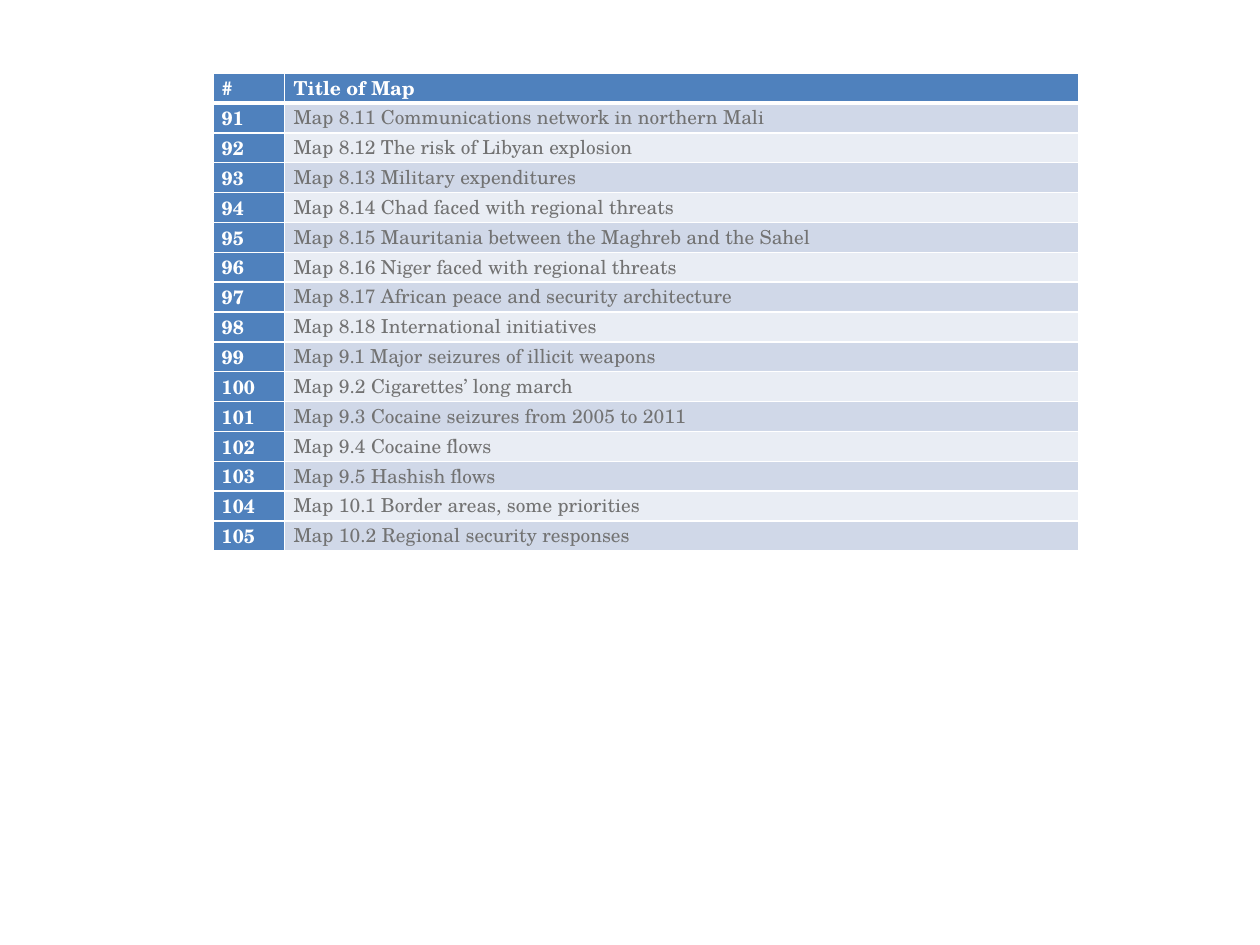
from lxml import etree
from pptx import Presentation
from pptx.dml.color import RGBColor
from pptx.enum.text import PP_ALIGN
from pptx.oxml.ns import qn
from pptx.util import Inches, Pt

WHITE = RGBColor(0xFF, 0xFF, 0xFF)
BLUE = RGBColor(0x4F, 0x81, 0xBD)
BAND_DARK = RGBColor(0xD0, 0xD8, 0xE8)
BAND_LIGHT = RGBColor(0xE9, 0xED, 0xF4)
GREY = RGBColor(0x72, 0x72, 0x72)
FONT = "TeX Gyre Schola"
FIRST_NUMBER = 91

TITLES = [
    "Map 8.11 Communications network in northern Mali",
    "Map 8.12 The risk of Libyan explosion",
    "Map 8.13 Military expenditures",
    "Map 8.14 Chad faced with regional threats",
    "Map 8.15 Mauritania between the Maghreb and the Sahel",
    "Map 8.16 Niger faced with regional threats",
    "Map 8.17 African peace and security architecture",
    "Map 8.18 International initiatives",
    "Map 9.1 Major seizures of illicit weapons",
    "Map 9.2 Cigarettes’ long march",
    "Map 9.3 Cocaine seizures from 2005 to 2011",
    "Map 9.4 Cocaine flows",
    "Map 9.5 Hashish flows",
    "Map 10.1 Border areas, some priorities",
    "Map 10.2 Regional security responses",
]


def add_border(cell, side, width):
    tcPr = cell._tc.get_or_add_tcPr()
    ln = etree.SubElement(tcPr, qn("a:" + side), w=str(Pt(width)))
    fill = etree.SubElement(ln, qn("a:solidFill"))
    etree.SubElement(fill, qn("a:srgbClr"), val=str(WHITE))


prs = Presentation()
prs.slide_width, prs.slide_height = Inches(10), Inches(7.5)
s = prs.slides.add_slide(prs.slide_layouts[6])

# Map list: header row, then numbered titles
rows = [("#", "Title of Map")]
rows += [(str(n), title) for n, title in enumerate(TITLES, FIRST_NUMBER)]
table = s.shapes.add_table(len(rows), 2, Inches(1.69), Inches(0.58),
                           Inches(6.87), Inches(3.78)).table
table.columns[0].width = Inches(0.57)
table.columns[1].width = Inches(6.3)

for i, row in enumerate(rows):
    for j, text in enumerate(row):
        cell = table.cell(i, j)
        is_heading = i == 0 or j == 0
        cell.margin_left = cell.margin_right = Inches(0.07)
        cell.margin_top = cell.margin_bottom = 0

        # Borders, heavier under the header, then the banded fill
        add_border(cell, "lnL", 1)
        add_border(cell, "lnR", 1)
        add_border(cell, "lnT", 3 if i == 1 else 1)
        add_border(cell, "lnB", 3 if i == 0 else 1)
        cell.fill.solid()
        band = BAND_DARK if i % 2 else BAND_LIGHT
        cell.fill.fore_color.rgb = BLUE if is_heading else band

        # Text
        p = cell.text_frame.paragraphs[0]
        p.text = text
        p.alignment = PP_ALIGN.JUSTIFY
        r = p.runs[0]
        r.font.name = FONT
        r.font.size = Pt(11)
        r.font.bold = is_heading
        r.font.color.rgb = WHITE if is_heading else GREY

prs.save("out.pptx")
